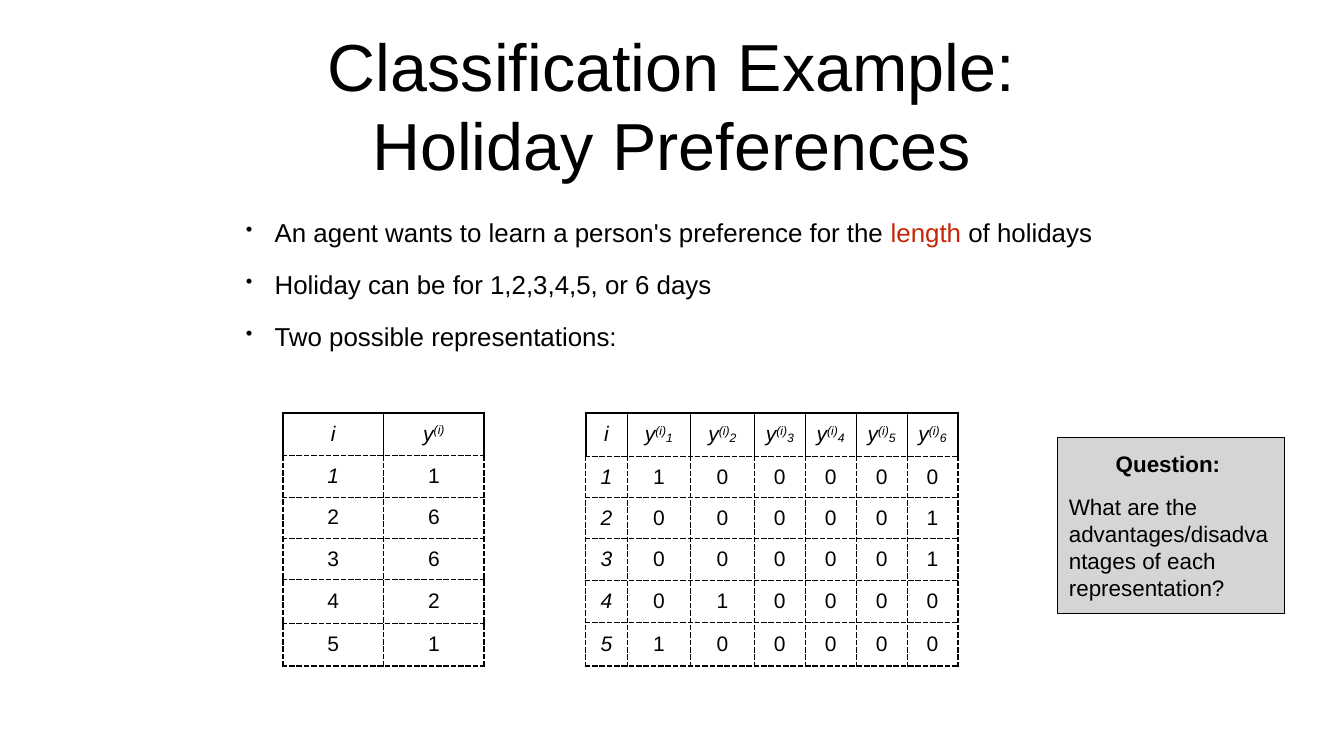
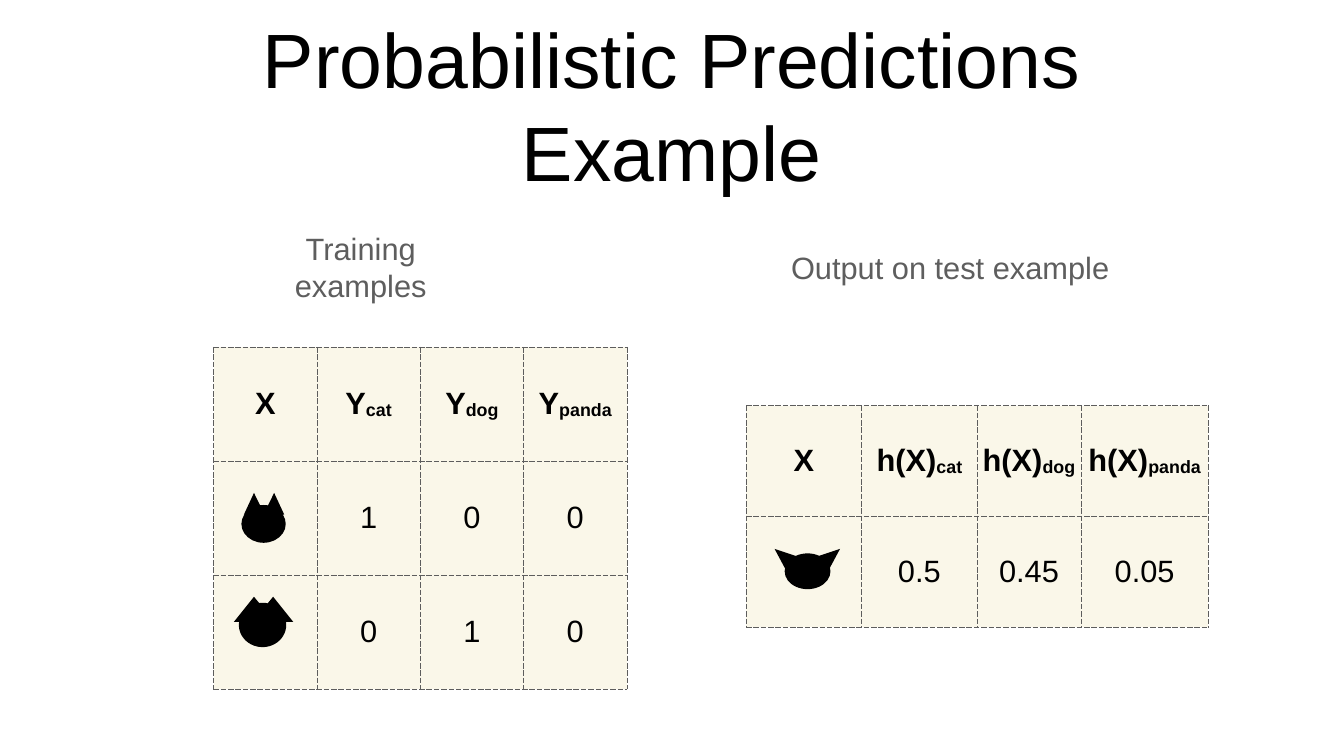
from itertools import product

from lxml.etree import SubElement
from pptx import Presentation
from pptx.dml.color import RGBColor
from pptx.enum.shapes import MSO_SHAPE
from pptx.enum.text import MSO_ANCHOR, MSO_AUTO_SIZE, PP_ALIGN
from pptx.oxml.ns import qn
from pptx.util import Pt

PX = 9144
FONT = "Arial"
BLACK = RGBColor(0x00, 0x00, 0x00)
RED = RGBColor(0xC8, 0x25, 0x06)
PANEL_GRAY = RGBColor(0xD6, 0xD5, 0xD5)
CAPTION_GRAY = RGBColor(0x5E, 0x5E, 0x5E)
BORDER_GRAY = RGBColor(0x5D, 0x5D, 0x5D)
CREAM = RGBColor(0xFA, 0xF7, 0xE9)
TITLE_BOX = (222, 41, 2222, 332)
SUPERSCRIPT = {"baseline": 32}
SUBSCRIPT = {"baseline": -6}


def scaled(box):
    """Turn px lengths into EMU."""
    return [length * PX for length in box]


def format_span(span, size, color=BLACK, bold=False, italic=False, baseline=0):
    """Set the font of one run."""
    font = span.font
    font.name, font.size, font.color.rgb = FONT, Pt(size), color
    font.bold, font.italic = bold, italic
    if baseline:
        font._element.set("baseline", str(baseline * 1000))


def add_bullet(para):
    """Give a paragraph a small hanging bullet."""
    properties = para._p.get_or_add_pPr()
    properties.set("marL", str(57 * PX))
    properties.set("indent", str(-57 * PX))
    SubElement(properties, qn("a:buSzPct")).set("val", "75000")
    SubElement(properties, qn("a:buChar")).set("char", "•")


def write(frame, paragraphs, align=PP_ALIGN.LEFT, before=0,
          bullet=False, margins=(8, 8, 8, 8), **style):
    """Fill a text frame; a paragraph is a string or a list of (text, style) spans."""
    frame.word_wrap = True
    frame.auto_size = MSO_AUTO_SIZE.NONE
    frame.vertical_anchor = MSO_ANCHOR.MIDDLE
    (frame.margin_left, frame.margin_top,
     frame.margin_right, frame.margin_bottom) = scaled(margins)
    for index, spans in enumerate(paragraphs):
        para = frame.add_paragraph() if index else frame.paragraphs[0]
        para.alignment = align
        para.space_before = Pt(before)
        para.line_spacing = 1.0
        if bullet:
            add_bullet(para)
        for text, changes in [(spans, {})] if isinstance(spans, str) else spans:
            span = para.add_run()
            span.text = text
            format_span(span, **{**style, **changes})


def add_page(deck, title_lines, size):
    """Add a title-only page and format its title."""
    page = deck.slides.add_slide(deck.slide_layouts[5])
    title = page.shapes.title
    title.left, title.top, title.width, title.height = scaled(TITLE_BOX)
    write(title.text_frame, title_lines, align=PP_ALIGN.CENTER, size=size)
    return page


def add_text(page, box, paragraphs, **style):
    """Add a text box."""
    text_box = page.shapes.add_textbox(*scaled(box))
    write(text_box.text_frame, paragraphs, **style)


def add_border(cell, side, width, color, dashed):
    """Draw one side of a cell."""
    line = SubElement(cell._tc.get_or_add_tcPr(), qn(f"a:ln{side}"), w=str(Pt(width)))
    fill = SubElement(line, qn("a:solidFill"))
    SubElement(fill, qn("a:srgbClr")).set("val", str(color))
    SubElement(line, qn("a:prstDash")).set("val", "dash" if dashed else "solid")


def add_grid(page, origin, widths, heights, rows, size, border, outer=1,
             fill=None, solid_header=False, header_style=None, italics=()):
    """Add a table with dashed borders and centred cells."""
    box = (*origin, sum(widths), sum(heights))
    table = page.shapes.add_table(len(rows), len(widths), *scaled(box)).table
    table.first_row = table.horz_banding = False
    for column, width in zip(table.columns, widths):
        column.width = width * PX
    for row, height in zip(table.rows, heights):
        row.height = height * PX
    last_row, last_column = len(rows) - 1, len(widths) - 1
    for i, j in product(range(len(rows)), range(len(widths))):
        cell = table.cell(i, j)
        edges = {"L": j == 0, "R": j == last_column, "T": i == 0, "B": i == last_row}
        for side, is_outer in edges.items():
            dashed = not (solid_header and i == 0 and side != "B")
            add_border(cell, side, outer if is_outer else 1, border, dashed)
        if fill is None:
            cell.fill.background()
        else:
            cell.fill.solid()
            cell.fill.fore_color.rgb = fill
        cell.vertical_anchor = MSO_ANCHOR.MIDDLE
        (cell.margin_left, cell.margin_top,
         cell.margin_right, cell.margin_bottom) = scaled((6, 6, 6, 6))
        style = {"size": size, "italic": (i, j) in italics}
        if i == 0:
            style.update(header_style or {})
        para = cell.text_frame.paragraphs[0]
        para.alignment = PP_ALIGN.CENTER
        content = rows[i][j]
        for text, changes in [(content, {})] if isinstance(content, str) else content:
            if text:
                span = para.add_run()
                span.text = text
                format_span(span, **{**style, **changes})


def paint(shape, color):
    """Fill a shape without line or shadow."""
    shape.shadow.inherit = False
    shape.fill.solid()
    shape.fill.fore_color.rgb = color
    shape.line.fill.background()


def add_silhouette(page, origin, head, ear, axis):
    """Draw a head with an ear and its mirror image about the axis."""
    left, top = origin
    x, y, width, height = head
    paint(page.shapes.add_shape(
        MSO_SHAPE.OVAL, *scaled((left + x, top + y, width, height))), BLACK)
    for points in (ear, [(2 * axis - x, y) for x, y in ear]):
        start, *others = [(left + x, top + y) for x, y in points]
        builder = page.shapes.build_freeform(*start, scale=PX)
        builder.add_line_segments(others, close=True)
        paint(builder.convert_to_shape(), BLACK)


def add_question(page, box):
    """Add the gray question panel."""
    panel = page.shapes.add_shape(MSO_SHAPE.RECTANGLE, *scaled(box))
    paint(panel, PANEL_GRAY)
    panel.line.color.rgb = BLACK
    panel.line.width = Pt(1)
    write(panel.text_frame,
          ["Question: ", "What are the advantages/disadvantages of each representation?"],
          before=24, size=32, margins=(22, 22, 22, 22))
    heading = panel.text_frame.paragraphs[0]
    heading.alignment = PP_ALIGN.CENTER
    heading.runs[0].font.bold = True


def add_holiday_page(deck):
    """Build the holiday page with two representations."""
    page = add_page(deck, ["Classification Example:", "Holiday Preferences"], 95)
    add_text(page, (480, 398, 1707, 332), [
        [("An agent wants to learn a person's preference for the ", {}),
         ("length", {"color": RED}), (" of holidays", {})],
        "Holiday can be for 1,2,3,4,5, or 6 days",
        "Two possible representations:",
    ], size=37, before=30, bullet=True)
    lengths = [1, 6, 6, 2, 1]
    target = [("y", {}), ("(i)", SUPERSCRIPT)]
    style = {"size": 30, "border": BLACK, "outer": 3, "solid_header": True,
             "header_style": {"italic": True}}
    numbered = [[str(i), str(days)] for i, days in enumerate(lengths, 1)]
    add_grid(page, (561, 819), [200] * 2, [85, 82, 82, 82, 86, 86],
             [["i", target], *numbered], italics=[(1, 0)], **style)
    header = ["i"] + [target + [(str(day), SUBSCRIPT)] for day in range(1, 7)]
    indicators = [[str(i)] + [str(int(day == days)) for day in range(1, 7)]
                  for i, days in enumerate(lengths, 1)]
    add_grid(page, (1162, 819), [83, 125, 127] + [101] * 4, [86, 82, 82, 82, 84, 86],
             [header, *indicators], italics=[(i, 0) for i in range(1, 6)], **style)
    add_question(page, (2099, 868, 450, 349))


def add_animal_grid(page, origin, widths, height, label, values, silhouettes):
    """Add a table of animal scores with a silhouette in each row."""
    header = ["X"] + [[(label, {}), (animal, SUBSCRIPT)]
                      for animal in ("cat", "dog", "panda")]
    rows = [header] + [["", *scores] for scores in values]
    add_grid(page, origin, widths, [height] * len(rows), rows, size=44,
             border=BORDER_GRAY, fill=CREAM, header_style={"bold": True})
    for head, ear, axis in silhouettes:
        add_silhouette(page, origin, head, ear, axis)


def add_prediction_page(deck):
    """Build the page of training examples and test output."""
    page = add_page(deck, ["Probabilistic Predictions Example"], 110)
    dog = ((50, 507, 94, 88), [(80, 495), (121, 545), (40, 545)], 99)
    cat = ((55, 313, 88, 75), [(80, 289), (101, 332), (60, 332)], 100)
    unknown = ((76, 293, 91, 71), [(186, 284), (164, 325), (135, 301)], 121)
    add_animal_grid(page, (424, 689), [205] * 4, 226, "Y",
                    [["1", "0", "0"], ["0", "1", "0"]], [dog, cat])
    add_animal_grid(page, (1481, 805), [229, 229, 206, 253], 220, "h(X)",
                    [["0.5", "0.45", "0.05"]], [unknown])
    caption = {"size": 44, "color": CAPTION_GRAY, "align": PP_ALIGN.CENTER}
    add_text(page, (556, 487, 320, 86), ["Training examples"], **caption)
    add_text(page, (1556, 487, 660, 86), ["Output on test example"], **caption)


def main():
    """Build and save the deck."""
    deck = Presentation()
    deck.slide_width, deck.slide_height = scaled((2667, 1500))
    add_holiday_page(deck)
    add_prediction_page(deck)
    deck.save("out.pptx")


if __name__ == "__main__":
    main()
